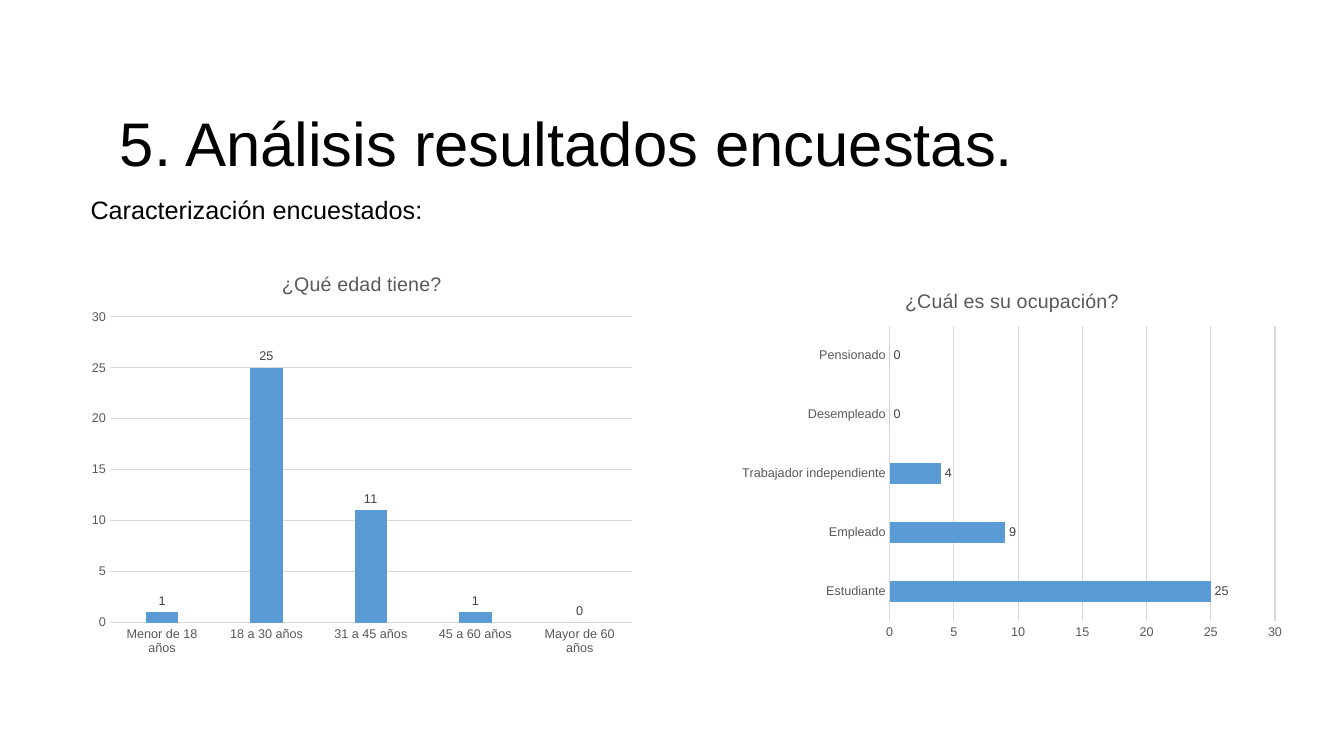
"""Build the survey results slide with two respondent profile charts."""
import pptx
import pptx.chart.data
import pptx.dml.color
import pptx.enum.chart
import pptx.enum.text
import pptx.util

Pt = pptx.util.Pt
xl = pptx.enum.chart


def rgb(value):
    return pptx.dml.color.RGBColor.from_string(value)


def write(tf, text, size=18, color="000000", spacing=None):
    p = tf.paragraphs[0]
    p.alignment = pptx.enum.text.PP_ALIGN.LEFT
    p.line_spacing = spacing
    r = p.add_run()
    r.text = text
    r.font.name, r.font.size, r.font.bold = "Arial", Pt(size), False
    r.font.color.rgb = rgb(color)


prs = pptx.Presentation()
prs.slide_width, prs.slide_height = Pt(960), Pt(540)
s = prs.slides.add_slide(prs.slide_layouts[5])

sp = s.shapes.title
sp.left, sp.top, sp.width, sp.height = Pt(78.5), Pt(53.3), Pt(828), Pt(78.5)
tf = sp.text_frame
tf.auto_size = pptx.enum.text.MSO_AUTO_SIZE.NONE
tf.vertical_anchor = pptx.enum.text.MSO_ANCHOR.BOTTOM
write(tf, "5. Análisis resultados encuestas.", size=44, spacing=0.9)

charts = [
    ("¿Qué edad tiene?", xl.XL_CHART_TYPE.COLUMN_CLUSTERED, 57.6, 181.4, 293, 219, -27,
     {"Menor de 18 años": 1, "18 a 30 años": 25, "31 a 45 años": 11,
      "45 a 60 años": 1, "Mayor de 60 años": 0}),
    ("¿Cuál es su ocupación?", xl.XL_CHART_TYPE.BAR_CLUSTERED, 522, 194.4, 267.8, 182, 0,
     {"Estudiante": 25, "Empleado": 9, "Trabajador independiente": 4,
      "Desempleado": 0, "Pensionado": 0}),
]
for title, kind, left, top, height, gap, overlap, answers in charts:
    data = pptx.chart.data.CategoryChartData()
    data.categories = list(answers)
    data.add_series("Series 1", list(answers.values()))
    chart = s.shapes.add_chart(kind, Pt(left), Pt(top), Pt(401.8), Pt(height), data).chart
    chart.font.name, chart.font.size = "Arial", Pt(10)
    chart.font.color.rgb = rgb("000000")
    chart.has_legend = False
    chart.has_title = True
    write(chart.chart_title.text_frame, title, size=14, color="595959")
    chart.chart_title.include_in_layout = False

    for axis in (chart.category_axis, chart.value_axis):
        axis.major_tick_mark = axis.minor_tick_mark = xl.XL_TICK_MARK.NONE
        font = axis.tick_labels.font
        font.name, font.size = "Arial", Pt(9)
        font.color.rgb = rgb("595959")
    chart.value_axis.format.line.fill.background()
    chart.value_axis.minimum_scale, chart.value_axis.maximum_scale = 0, 30
    chart.value_axis.major_unit = 5
    for line in (chart.category_axis.format.line, chart.value_axis.major_gridlines.format.line):
        line.color.rgb = rgb("D9D9D9")
        line.width = Pt(0.75)

    plot = chart.plots[0]
    plot.gap_width, plot.overlap = gap, overlap
    plot.vary_by_categories = False
    fill = plot.series[0].format.fill
    fill.solid()
    fill.fore_color.rgb = rgb("5B9BD5")
    plot.has_data_labels = True
    labels = plot.data_labels
    labels.show_value = True
    labels.position = xl.XL_LABEL_POSITION.OUTSIDE_END
    labels.font.name, labels.font.size = "Arial", Pt(9)
    labels.font.color.rgb = rgb("404040")

tf = s.shapes.add_textbox(Pt(57.6), Pt(135.4), Pt(450), Pt(29)).text_frame
tf.word_wrap = True
tf.auto_size = pptx.enum.text.MSO_AUTO_SIZE.SHAPE_TO_FIT_TEXT
write(tf, "Caracterización encuestados:")

prs.save("out.pptx")
